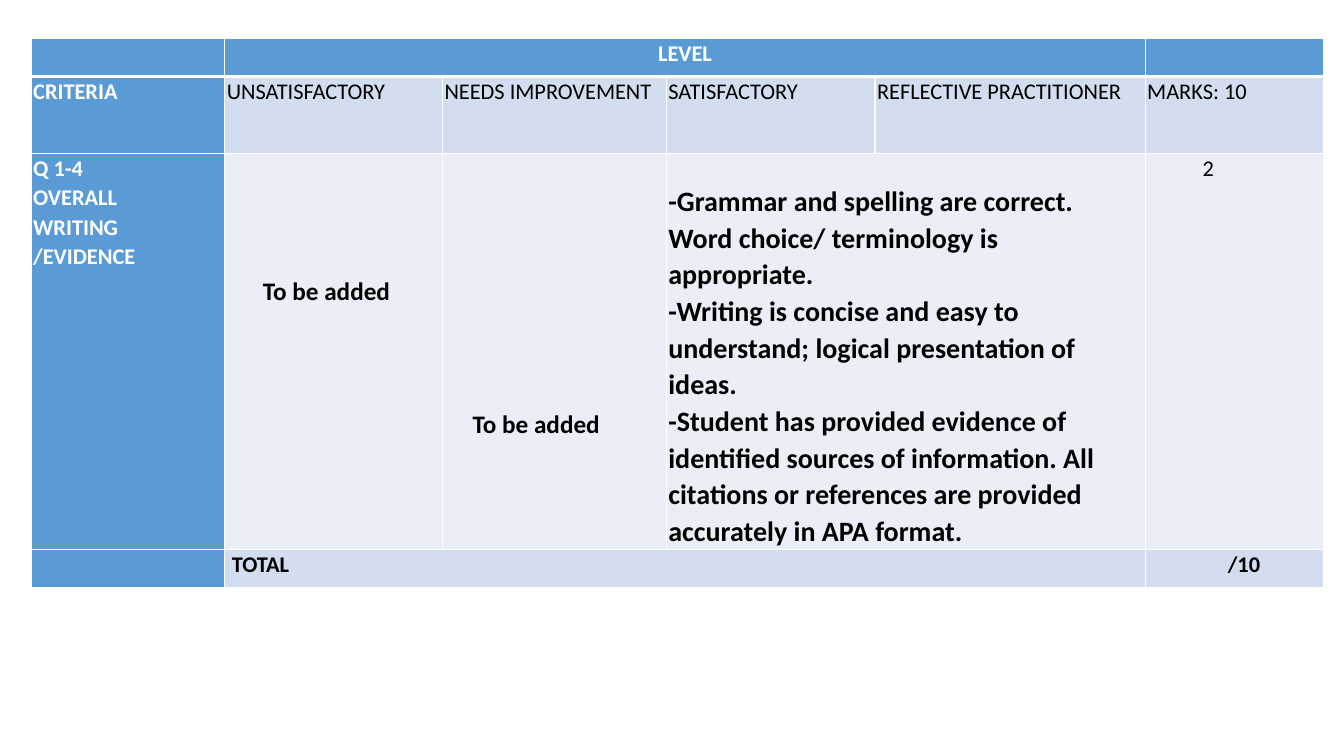
from lxml import etree
from pptx import Presentation, util as u
from pptx.dml import color as c
from pptx.enum import text as t
from pptx.oxml import ns

BLUE, PALE, LIGHT, WHITE, BLACK = "5B9BD5", "D2DEEF", "EAEFF7", "FFFFFF", "000000"


def tint(hue):
    return c.RGBColor.from_string(hue)


def apply(item, form):
    for key, val in form.items():
        setattr(item, key, val)


class Page:
    font = "Calibri"

    def __init__(self, deck):
        self.slide = deck.slides.add_slide(deck.slide_layouts[6])

    def words(self, frame, lines, hue=BLACK, size=16, bold=False, **form):
        frame.word_wrap = True
        for i, line in enumerate(lines):
            para = frame.paragraphs[0] if i == 0 else frame.add_paragraph()
            para.text = line
            apply(para, form)
            for run in para.runs:
                apply(run.font, {"name": self.font, "size": u.Pt(size), "bold": bold})
                run.font.color.rgb = tint(hue)

    def label(self, x, y, w, h, line):
        box = self.slide.shapes.add_textbox(*map(u.Inches, (x, y, w, h)))
        self.words(box.text_frame, [line], size=18, bold=True)

    def grid(self, x, y, cols, rows):
        size = map(u.Inches, (x, y, sum(cols), sum(rows)))
        table = self.slide.shapes.add_table(len(rows), len(cols), *size).table
        for col, w in zip(table.columns, cols):
            col.width = u.Inches(w)
        for row, h in zip(table.rows, rows):
            row.height = u.Inches(h)
        return table

    def edge(self, cell, side, width):
        line = etree.SubElement(cell._tc.get_or_add_tcPr(), ns.qn("a:ln" + side), w=str(u.Pt(width)))
        fill = etree.SubElement(line, ns.qn("a:solidFill"))
        etree.SubElement(fill, ns.qn("a:srgbClr"), val=WHITE)

    def cell(self, cell, hue, top, base):
        for side, width in (("L", 1), ("R", 1), ("T", top), ("B", base)):
            self.edge(cell, side, width)
        cell.fill.solid()
        cell.fill.fore_color.rgb = tint(hue)
        apply(cell, {"margin_left": u.Inches(0.02), "margin_right": u.Inches(0.02),
                     "margin_top": 0, "margin_bottom": 0})

    def entry(self, cell, lines, left=0.02, top=0, **form):
        apply(cell, {"margin_left": u.Inches(left), "margin_top": u.Inches(top)})
        self.words(cell.text_frame, lines, line_spacing=1.07, **form)


def main():
    deck = Presentation()
    apply(deck, {"slide_width": u.Inches(13.33), "slide_height": u.Inches(7.5)})
    page = Page(deck)
    table = page.grid(0.31, 0.38, [1.92, 2.16, 2.22, 2.07, 2.68, 1.77], [0.38, 0.76, 3.93, 0.38])
    for r, band in enumerate([BLUE, PALE, LIGHT, PALE]):
        for k in range(6):
            page.cell(table.cell(r, k), BLUE if k == 0 else band, 3 if r == 1 else 1, 3 if r == 0 else 1)
    for r, start, end in [(0, 1, 4), (2, 3, 4), (3, 1, 4)]:
        table.cell(r, start).merge(table.cell(r, end))

    head = {"hue": WHITE, "bold": True}
    page.entry(table.cell(0, 1), ["LEVEL"], alignment=t.PP_ALIGN.CENTER, **head)
    page.entry(table.cell(1, 0), ["CRITERIA"], **head)
    levels = ["UNSATISFACTORY", "NEEDS IMPROVEMENT", "SATISFACTORY", "REFLECTIVE PRACTITIONER", "MARKS: 10"]
    for k, level in enumerate(levels, 1):
        page.entry(table.cell(1, k), [level])
    page.entry(table.cell(2, 0), ["Q 1-4 \vOVERALL WRITING /EVIDENCE"], **head)
    page.entry(table.cell(2, 3), [
        "-Grammar and spelling are correct.",
        "Word choice/ terminology is appropriate.",
        "-Writing is concise and easy to understand; logical presentation of ideas.",
        "-Student has provided evidence of identified sources of information. "
        "All citations or references are provided accurately in APA format.",
    ], top=0.29, size=20, bold=True)
    page.entry(table.cell(2, 5), ["2"], left=0.57)
    page.entry(table.cell(3, 1), ["TOTAL"], left=0.07, bold=True)
    page.entry(table.cell(3, 5), ["/10"], left=0.82, bold=True)

    for x, y in [(2.51, 2.68), (4.59, 4)]:
        page.label(x, y, 1.66, 0.4, "To be added")
    deck.save("out.pptx")


if __name__ == "__main__":
    main()
